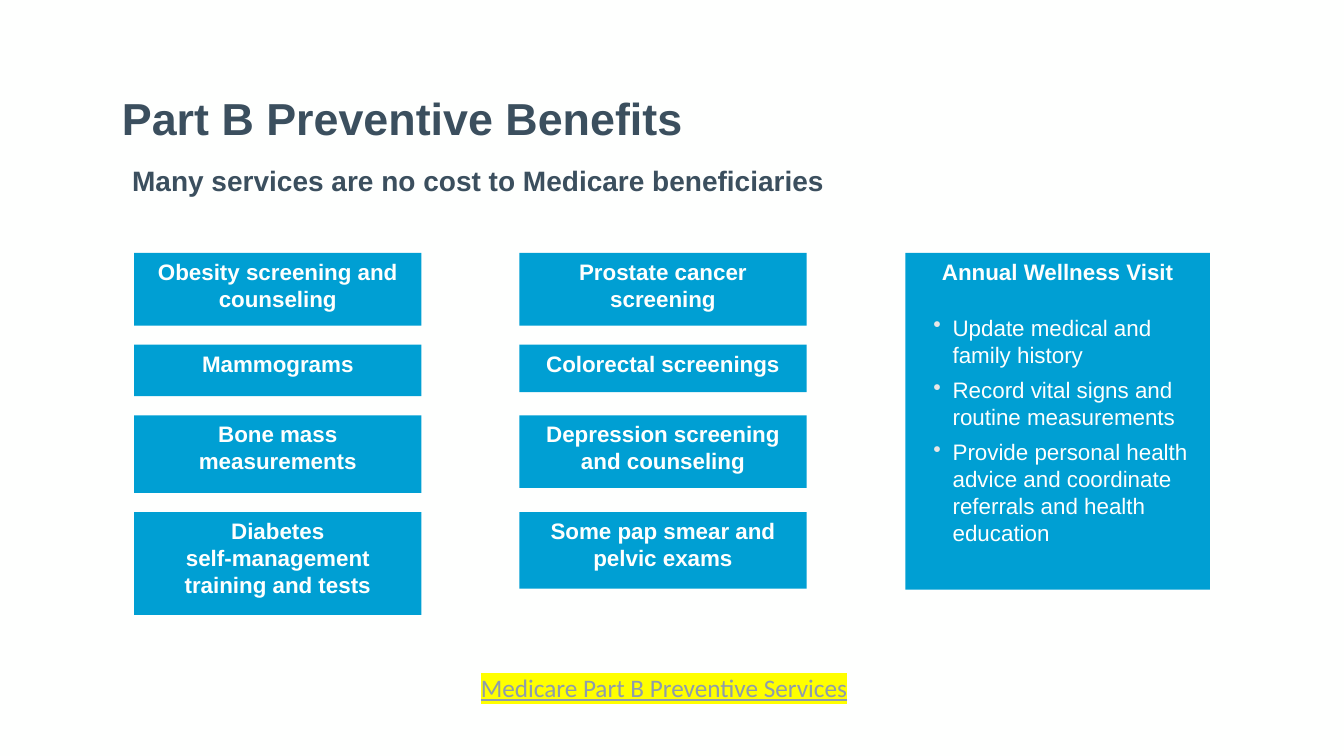
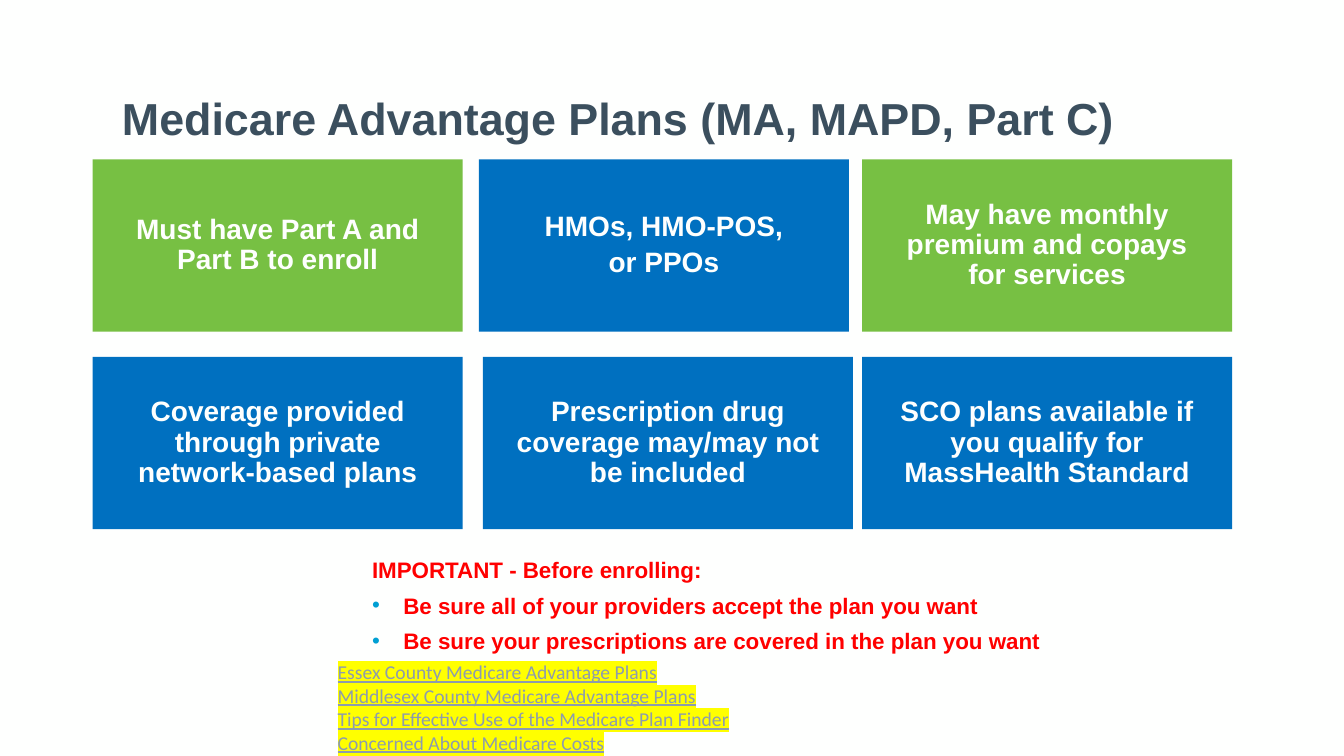
"""Build two slides on Medicare preventive benefits and Advantage plans."""
from lxml import etree
from pptx import Presentation
from pptx.dml.color import RGBColor
from pptx.enum.shapes import MSO_SHAPE
from pptx.enum.text import MSO_ANCHOR, MSO_AUTO_SIZE, PP_ALIGN
from pptx.oxml.ns import qn
from pptx.util import Inches, Pt

RECTANGLE = MSO_SHAPE.RECTANGLE
TOP, MIDDLE, BOTTOM = MSO_ANCHOR.TOP, MSO_ANCHOR.MIDDLE, MSO_ANCHOR.BOTTOM
LEFT, CENTER = PP_ALIGN.LEFT, PP_ALIGN.CENTER
NO_AUTOFIT = MSO_AUTO_SIZE.NONE

COLORS = {
    "background": "FEFFFE",
    "slate": "3B4F5E",
    "cyan": "009FD3",
    "green": "77C043",
    "blue": "0070C0",
    "red": "FF0000",
    "pale": "E7E6E6",
    "link": "8D9CAD",
    "highlight": "FFFF00",
}
TEXT_FONT = "Arial"
LINK_FONT = "Calibri"

SERVICE_TOPS = (2.51, 3.42, 4.12, 5.08)
SERVICE_WIDTH = 2.85
SERVICE_COLUMNS = (
    (1.33, (
        ("Obesity screening and counseling", 0.72),
        ("Mammograms", 0.51),
        ("Bone mass measurements", 0.77),
        ("Diabetes\vself-management training and tests", 1.02),
    )),
    (5.15, (
        ("Prostate cancer screening", 0.72),
        ("Colorectal screenings", 0.47),
        ("Depression screening and counseling", 0.72),
        ("Some pap smear and pelvic exams", 0.76),
    )),
)
WELLNESS_LINES = (
    "Annual Wellness Visit",
    "Update medical and family history",
    "Record vital signs and routine measurements",
    "Provide personal health advice and coordinate referrals and health education",
)

PLAN_WIDTH, PLAN_HEIGHT = 3.67, 1.71
PLAN_ROWS = (
    (1.58, (
        (0.92, "green", ("Must have Part A and\vPart B to enroll",)),
        (4.75, "blue", ("HMOs, HMO-POS,", "or PPOs")),
        (8.55, "green", ("May have monthly premium and copays\vfor services",)),
    )),
    (3.54, (
        (0.92, "blue", ("Coverage provided through private\vnetwork-based plans",)),
        (4.79, "blue", ("Prescription drug coverage may/may not\vbe included",)),
        (8.55, "blue", ("SCO plans available if you qualify for MassHealth Standard",)),
    )),
)
ENROLLING_LINES = (
    "IMPORTANT - Before enrolling:",
    "Be sure all of your providers accept the plan you want",
    "Be sure your prescriptions are covered in the plan you want",
)
PLAN_LINKS = (
    "Essex County Medicare Advantage Plans",
    "Middlesex County Medicare Advantage Plans",
    "Tips for Effective Use of the Medicare Plan Finder",
    "Concerned About Medicare Costs",
)


def rgb(name):
    """Return the named colour."""
    return RGBColor.from_string(COLORS[name])


def place(shape, left, top, width, height):
    """Move and size a shape in inches."""
    shape.left, shape.top = Inches(left), Inches(top)
    shape.width, shape.height = Inches(width), Inches(height)


def write(shape, lines, size, color, bold=True, font_name=TEXT_FONT,
          alignment=LEFT, anchor=TOP, line_spacing=1.0, gap=0):
    """Write lines into a shape with one text style and gaps between them."""
    frame = shape.text_frame
    frame.word_wrap = True
    frame.auto_size = NO_AUTOFIT
    frame.vertical_anchor = anchor
    for index, line in enumerate(lines):
        paragraph = frame.add_paragraph() if index else frame.paragraphs[0]
        paragraph.text = line
        paragraph.alignment = alignment
        paragraph.line_spacing = line_spacing
        paragraph.space_before = Pt(gap if index else 0)
        paragraph.space_after = Pt(0)
        for run in paragraph.runs:
            run.font.name = font_name
            run.font.size = Pt(size)
            run.font.bold = bold
            run.font.color.rgb = rgb(color)
    return frame.paragraphs


def set_bullet(paragraph, color=None, margin=0, hanging=0):
    """Give a paragraph a coloured bullet, or none when no colour is named."""
    properties = paragraph._p.get_or_add_pPr()
    properties.set("marL", str(Inches(margin)))
    properties.set("indent", str(-Inches(hanging)))
    if color is None:
        etree.SubElement(properties, qn("a:buNone"))
        return
    bullet_color = etree.SubElement(properties, qn("a:buClr"))
    etree.SubElement(bullet_color, qn("a:srgbClr"), val=COLORS[color])
    etree.SubElement(properties, qn("a:buChar"), char="•")


def add_titled_slide(presentation, title):
    """Add a slide with the shared title style."""
    slide = presentation.slides.add_slide(presentation.slide_layouts[1])
    shape = slide.shapes.title
    place(shape, 1.21, 0.66, 11.47, 0.78)
    write(shape, [title], 32, "slate", anchor=BOTTOM, line_spacing=0.9)
    frame = shape.text_frame
    frame.margin_left = frame.margin_right = 0
    frame.margin_top = frame.margin_bottom = 0
    return slide


def add_card(slide, box, color, lines, size=16, **style):
    """Add a filled rectangle with bold light text."""
    left, top, width, height = map(Inches, box)
    shape = slide.shapes.add_shape(RECTANGLE, left, top, width, height)
    shape.shadow.inherit = False
    shape.fill.solid()
    shape.fill.fore_color.rgb = rgb(color)
    shape.line.fill.background()
    return write(shape, lines, size, "background", alignment=CENTER, **style)


def add_link_lines(slide, box, lines, size):
    """Add underlined, highlighted reference lines."""
    shape = slide.shapes.add_textbox(*map(Inches, box))
    paragraphs = write(shape, lines, size, "link", bold=False, font_name=LINK_FONT)
    for paragraph in paragraphs:
        for run in paragraph.runs:
            run.font.underline = True
            fill = run._r.get_or_add_rPr().find(qn("a:solidFill"))
            highlight = etree.Element(qn("a:highlight"))
            etree.SubElement(highlight, qn("a:srgbClr"), val=COLORS["highlight"])
            fill.addnext(highlight)


def add_wellness_card(slide):
    """Add the wellness visit card with its bulleted list."""
    heading, *items = add_card(
        slide, (8.98, SERVICE_TOPS[0], 3.02, 3.34), "cyan", WELLNESS_LINES, gap=6)
    heading.space_after = Pt(15)
    for paragraph in items:
        paragraph.alignment = LEFT
        paragraph.runs[0].font.bold = False
        set_bullet(paragraph, "pale", 0.37, 0.19)


def build_preventive_slide(presentation):
    """Build the preventive benefits slide."""
    slide = add_titled_slide(presentation, "Part B Preventive Benefits")
    body = slide.placeholders[1]
    place(body, 1.21, 1.61, 7.52, 0.32)
    subtitle = write(body, ["Many services are no cost to Medicare beneficiaries"],
                     20, "slate", line_spacing=0.9)
    set_bullet(subtitle[0])
    for left, services in SERVICE_COLUMNS:
        for top, (label, height) in zip(SERVICE_TOPS, services):
            add_card(slide, (left, top, SERVICE_WIDTH, height), "cyan", [label])
    add_wellness_card(slide)
    add_link_lines(slide, (4.67, 6.62, 4.99, 0.4),
                   ["Medicare Part B Preventive Services"], 18)


def build_advantage_slide(presentation):
    """Build the Medicare Advantage plans slide."""
    slide = add_titled_slide(presentation, "Medicare Advantage Plans (MA, MAPD, Part C)")
    for top, plans in PLAN_ROWS:
        for left, color, lines in plans:
            add_card(slide, (left, top, PLAN_WIDTH, PLAN_HEIGHT), color, lines,
                     size=20, anchor=MIDDLE, line_spacing=0.9, gap=4)
    body = slide.placeholders[1]
    place(body, 3.59, 5.47, 7.16, 1.03)
    heading, *items = write(body, ENROLLING_LINES, 16, "red", gap=6)
    set_bullet(heading)
    for paragraph in items:
        set_bullet(paragraph, "cyan", 0.31, 0.31)
    add_link_lines(slide, (3.25, 6.5, 4.92, 1.04), PLAN_LINKS, 14)


def main():
    """Create and save the presentation."""
    presentation = Presentation()
    presentation.slide_width = Inches(13.33)
    presentation.slide_height = Inches(7.5)
    background = presentation.slide_master.background.fill
    background.solid()
    background.fore_color.rgb = rgb("background")
    build_preventive_slide(presentation)
    build_advantage_slide(presentation)
    presentation.save("out.pptx")


if __name__ == "__main__":
    main()
